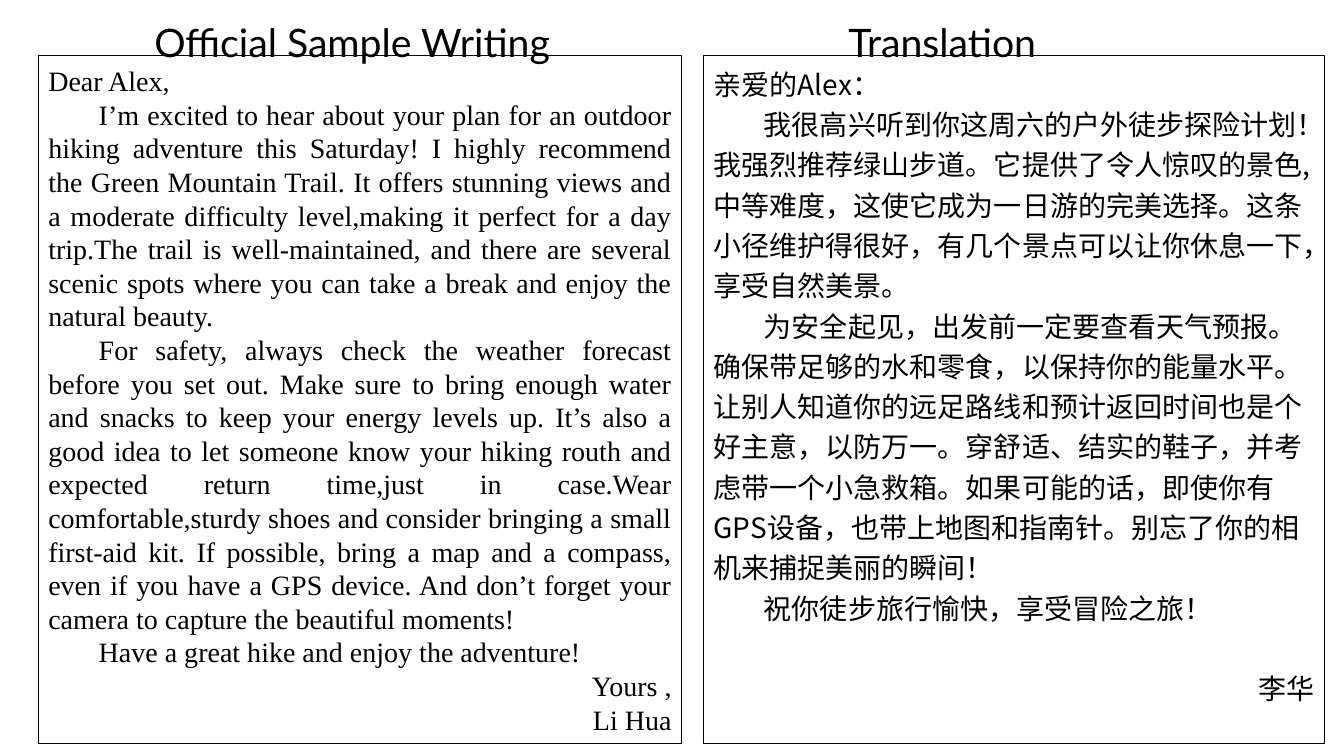
import pptx
import pptx.util
import pptx.dml.color
import pptx.enum.shapes
import pptx.enum.text
import lxml.etree
from dataclasses import dataclass
from pptx.oxml.ns import qn

Pt = pptx.util.Pt
Align = pptx.enum.text.PP_ALIGN
Anchor = pptx.enum.text.MSO_ANCHOR
Fit = pptx.enum.text.MSO_AUTO_SIZE


@dataclass(frozen=True)
class Theme:
    ink: pptx.dml.color.RGBColor = pptx.dml.color.RGBColor(0, 0, 0)
    head: str = "Lato"
    latin: str = "Times New Roman"
    han: str = "Noto Sans CJK SC"
    big: int = 28
    body: int = 20
    indent: int = 36
    gap: float = 28.8


THEME = Theme()

LETTER = [
    "Dear Alex,",
    "I’m excited to hear about your plan for an outdoor hiking adventure this Saturday! "
    "I highly recommend the Green Mountain Trail. It offers stunning views and a moderate "
    "difficulty level,making it perfect for a day trip.The trail is well-maintained, and "
    "there are several scenic spots where you can take a break and enjoy the natural beauty.",
    "For safety, always check the weather forecast before you set out. Make sure to bring "
    "enough water and snacks to keep your energy levels up. It’s also a good idea to let "
    "someone know your hiking routh and expected return time,just in case.Wear "
    "comfortable,sturdy shoes and consider bringing a small first-aid kit. If possible, "
    "bring a map and a compass, even if you have a GPS device. And don’t forget your camera "
    "to capture the beautiful moments!",
    "Have a great hike and enjoy the adventure!",
    "Yours ,",
    "Li Hua",
]

CHINESE = [
    "亲爱的Alex：",
    "我很高兴听到你这周六的户外徒步探险计划！我强烈推荐绿山步道。它提供了令人惊叹的景色,"
    "中等难度，这使它成为一日游的完美选择。这条小径维护得很好，有几个景点可以让你休息一下，"
    "享受自然美景。",
    "为安全起见，出发前一定要查看天气预报。确保带足够的水和零食，以保持你的能量水平。"
    "让别人知道你的远足路线和预计返回时间也是个好主意，以防万一。穿舒适、结实的鞋子，"
    "并考虑带一个小急救箱。如果可能的话，即使你有GPS设备，也带上地图和指南针。"
    "别忘了你的相机来捕捉美丽的瞬间！",
    "祝你徒步旅行愉快，享受冒险之旅！",
    "李华",
]


def style(para, size, face):
    """Format every run, for Latin and East Asian letters alike."""
    for run in para.runs:
        run.font.size = Pt(size)
        run.font.name = face
        run.font.color.rgb = THEME.ink
        props = run._r.get_or_add_rPr()
        lxml.etree.SubElement(props, qn("a:ea")).set("typeface", face)


def heading(shape, box, text):
    """Place a heading in its box."""
    shape.left, shape.top, shape.width, shape.height = map(Pt, box)
    frame = shape.text_frame
    frame.text = text
    frame.word_wrap = True
    frame.auto_size = Fit.NONE
    frame.vertical_anchor = Anchor.TOP
    para = frame.paragraphs[0]
    para.alignment = Align.LEFT
    style(para, THEME.big, THEME.head)


def panel(slide, box, lines, face, signs, align, anchor, space):
    """Draw a framed letter whose last lines, the signature, sit at the right."""
    rect = slide.shapes.add_shape(
        pptx.enum.shapes.MSO_SHAPE.RECTANGLE, *map(Pt, box))
    rect.shadow.inherit = False
    rect.fill.background()
    rect.line.color.rgb = THEME.ink
    rect.line.width = Pt(0.75)
    frame = rect.text_frame
    frame.word_wrap = True
    frame.vertical_anchor = anchor
    frame.text = "\n".join(lines)
    for i, para in enumerate(frame.paragraphs):
        signed = i >= len(lines) - signs
        para.alignment = Align.RIGHT if signed else align if i else Align.LEFT
        para.line_spacing = space
        if i:
            para._p.get_or_add_pPr().set("indent", str(Pt(THEME.indent)))
        style(para, THEME.body, face)
    return frame


def build(slide):
    # Framed letters
    top, height = 39.6, 491.8
    panel(slide, (27.4, top, 459.4, height), LETTER, THEME.latin, 2,
          Align.JUSTIFY, Anchor.MIDDLE, 1.0)
    frame = panel(slide, (502.6, top, 443.5, height), CHINESE, THEME.han, 1,
                  Align.LEFT, Anchor.TOP, 1.2)
    frame.paragraphs[-1].space_before = Pt(THEME.gap)

    # Headings above them
    heading(slide.shapes.title, (103, 9.4, 366.5, 41), "Official Sample Writing")
    heading(slide.shapes.add_textbox(0, 0, 0, 0), (599, 9.4, 189.4, 41), "Translation")


def main():
    deck = pptx.Presentation()
    deck.slide_width, deck.slide_height = Pt(960), Pt(540)
    build(deck.slides.add_slide(deck.slide_layouts[5]))
    deck.save("out.pptx")


if __name__ == "__main__":
    main()
